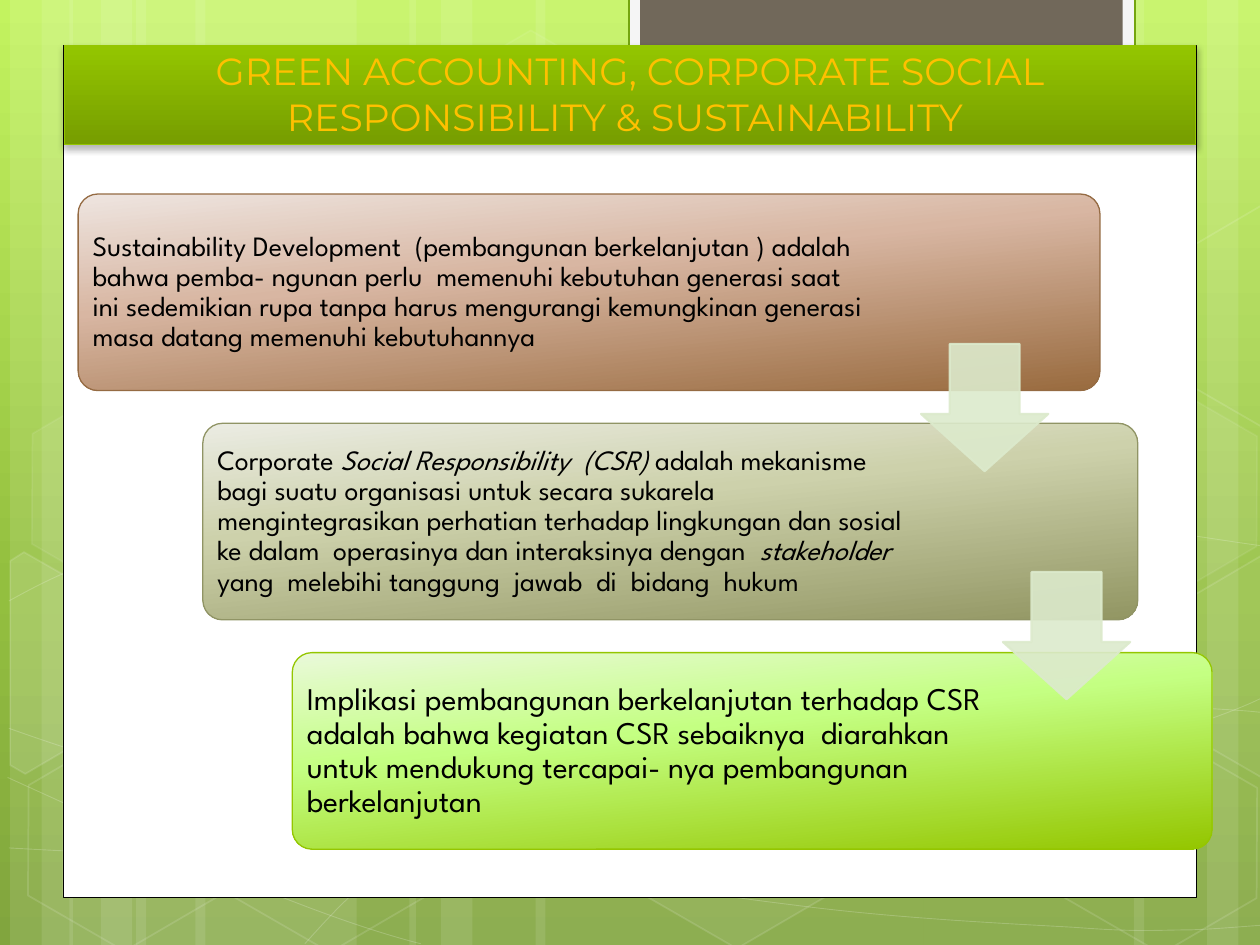
from math import cos, radians, sin

from lxml import etree
from pptx import Presentation
from pptx.dml.color import RGBColor
from pptx.enum.shapes import MSO_SHAPE
from pptx.enum.text import MSO_ANCHOR, PP_ALIGN
from pptx.oxml.ns import qn
from pptx.util import Inches, Pt

RECTANGLE = MSO_SHAPE.RECTANGLE
ROUNDED = MSO_SHAPE.ROUNDED_RECTANGLE
HEXAGON = MSO_SHAPE.HEXAGON
DOWN_ARROW = MSO_SHAPE.DOWN_ARROW
MIDDLE, BOTTOM = MSO_ANCHOR.MIDDLE, MSO_ANCHOR.BOTTOM
CENTER = PP_ALIGN.CENTER

WHITE = RGBColor(0xFF, 0xFF, 0xFF)
BLACK = RGBColor(0, 0, 0)
GREEN = RGBColor(0x94, 0xC6, 0x00)
DARK_GREEN = RGBColor(0x76, 0x9D, 0x00)
TAB_EDGE = RGBColor(0x74, 0xA5, 0x10)
TAB_LIGHT = RGBColor(0xF5, 0xF5, 0xF5)
TAB_BROWN = RGBColor(0x71, 0x68, 0x5A)
AMBER = RGBColor(0xFF, 0xC0, 0x00)
BROWN_EDGE = RGBColor(0x95, 0x6B, 0x43)
OLIVE_EDGE = RGBColor(0x90, 0x94, 0x65)
ARROW_GREEN = RGBColor(0xDC, 0xEA, 0xCC)
BACKGROUND = [(0, RGBColor(0xC3, 0xF3, 0x5F)), (62, RGBColor(0x93, 0xBF, 0x3F)), (100, RGBColor(0x81, 0xA5, 0x3E))]
BROWNS = [(0, RGBColor(0xEE, 0xE5, 0xE0)), (40, RGBColor(0xD8, 0xB6, 0xA2)), (100, RGBColor(0x99, 0x6B, 0x3F))]
OLIVES = [(0, RGBColor(0xEB, 0xEC, 0xE3)), (40, RGBColor(0xCD, 0xD1, 0xAB)), (100, RGBColor(0x92, 0x96, 0x63))]
LIMES = [(0, RGBColor(0xEA, 0xF9, 0xDA)), (40, RGBColor(0xC4, 0xFF, 0x82)), (100, GREEN)]

STRIPES = [(1.08, 1.75), (0.08, 0.5), (0.33, 0.83), (1.55, 1.75), (0.55, 0.5), (0.8, 0.83),
           (7.33, 1.75), (9.58, 0.5), (9, 0.83), (4.25, 3.08), (3.25, 0.5), (3.5, 0.83)]
CURVES = [
    ([(0.07, 6.73), (0.61, 6.76), (1.15, 6.79), (1.9, 6.78), (2.65, 6.77), (3.58, 6.75), (4.58, 6.65),
      (5.58, 6.55), (7, 6.36), (7.92, 6.17), (8.83, 5.98), (9.77, 5.68), (10.07, 5.51)], None),
    ([(0.07, 4.77), (0.36, 4.61), (0.65, 4.46), (1.21, 4.31), (1.78, 4.16), (2.59, 3.94), (3.47, 3.87),
      (4.36, 3.8), (5.44, 3.79), (6.54, 3.87), (7.64, 3.95), (9.47, 4.26), (10.07, 4.34)], None),
    ([(0.06, 6.17), (1.27, 6.72), (2.47, 7.27), (3.34, 7.49)], None),
    ([(0.07, 5.78), (0.38, 5.89), (0.7, 6), (1.28, 6.16), (1.86, 6.31), (2.73, 6.56), (3.57, 6.73),
      (4.4, 6.9), (5.45, 7.08), (6.28, 7.18), (7.11, 7.29), (8, 7.33), (8.53, 7.36),
      (9.05, 7.4), (9.19, 7.38), (9.45, 7.38), (9.71, 7.37), (9.89, 7.35), (10.07, 7.34)], None),
    ([(2.42, 7.49), (2.6, 7.29), (2.78, 7.09), (3.02, 6.91), (3.26, 6.73), (3.6, 6.53), (3.88, 6.39),
      (4.16, 6.25), (4.33, 6.19), (4.7, 6.09), (5.06, 5.99), (5.73, 5.85), (6.08, 5.78),
      (6.44, 5.71), (6.49, 5.71), (6.8, 5.69), (7.11, 5.66), (7.6, 5.63), (7.94, 5.62),
      (8.29, 5.61), (8.86, 5.62), (8.86, 5.62), (9.53, 5.62),
      (9.71, 5.63), (9.88, 5.64), (9.97, 5.65), (10.06, 5.66), (10.03, 5.65), (10.06, 5.66)], 21),
]
HEXAGONS = [(3.34, 0.36, 4, 8), (4.97, 5.89, 6, 12), (0.11, 5.91, None, 12),
            (0.14, 3.12, 7, 8), (1.74, 5.92, None, 12), (7.53, 4.53, 10, 12),
            (8.34, 5.93, None, 12), (8.34, 3.14, 7, 8)]
CUT_HEXAGONS = [
    ([(0.08, 4.45), (0.19, 4.38), (0.96, 4.82), (0.95, 5.7), (0.2, 6.14), (0.08, 6.07)], (0.36, 5.35), 10),
    ([(9.26, 4.85), (10.01, 4.41), (10.09, 4.46), (10.09, 6.13), (10.02, 6.17), (9.26, 5.73)], (9.85, 5.2), 4),
    ([(9.26, 2.07), (10.01, 1.63), (10.1, 1.68), (10.09, 3.35), (10.02, 3.39), (9.26, 2.95)], (9.85, 2.41), None),
]
TILT = 30

SUSTAINABILITY = [("Sustainability Development  (pembangunan berkelanjutan ) adalah bahwa pemba- ngunan perlu  memenuhi kebutuhan generasi saat ini sedemikian rupa tanpa harus mengurangi kemungkinan generasi masa datang memenuhi kebutuhannya", False)]
RESPONSIBILITY = [
    ("Corporate ", False), ("Social Responsibility  (CSR) ", True),
    ("adalah mekanisme bagi suatu organisasi untuk secara sukarela mengintegrasikan perhatian terhadap lingkungan dan sosial ke dalam  operasinya dan interaksinya dengan  ", False),
    ("stakeholder  ", True), ("yang  melebihi tanggung  jawab  di  bidang  hukum", False)]
IMPLICATION = [("Implikasi pembangunan berkelanjutan terhadap CSR adalah bahwa kegiatan CSR sebaiknya  diarahkan untuk mendukung tercapai- nya pembangunan berkelanjutan", False)]
CARDS = [(0.62, 8.11, 6.25, SUSTAINABILITY, 16, BROWNS, BROWN_EDGE),
         (1.61, 7.42, 5.64, RESPONSIBILITY, 16, OLIVES, OLIVE_EDGE),
         (2.32, 7.3, 5.55, IMPLICATION, 18, LIMES, GREEN)]


def set_alpha(color_parent, percent):
    color = color_parent.find(".//" + qn("a:srgbClr"))
    etree.SubElement(color, qn("a:alpha"), val=str(percent * 1000))


def set_gradient(fill, element, stops, angle):
    fill.gradient()
    fill.gradient_angle = 360 - angle
    stop_list = element.find(".//" + qn("a:gsLst"))
    for stop in list(stop_list):
        stop_list.remove(stop)
    for position, color in stops:
        stop = etree.SubElement(stop_list, qn("a:gs"), pos=str(position * 1000))
        etree.SubElement(stop, qn("a:srgbClr"), val=str(color))


def style(shape, fill=None, fill_alpha=100, line=None, line_width=1, line_alpha=100):
    shape.shadow.inherit = False
    properties = shape._element.spPr
    if fill is None:
        shape.fill.background()
    else:
        shape.fill.solid()
        shape.fill.fore_color.rgb = fill
        if fill_alpha < 100:
            set_alpha(properties.find(qn("a:solidFill")), fill_alpha)
    if line is None:
        shape.line.fill.background()
    else:
        shape.line.color.rgb = line
        shape.line.width = Pt(line_width)
        if line_alpha < 100:
            set_alpha(properties.find(qn("a:ln")), line_alpha)


def add_box(slide, kind, left, top, width, height):
    return slide.shapes.add_shape(kind, Inches(left), Inches(top), Inches(width), Inches(height))


def add_outline(slide, points, close):
    corners = [(Inches(x), Inches(y)) for x, y in points]
    builder = slide.shapes.build_freeform(*corners[0])
    builder.add_line_segments(corners[1:], close=close)
    return builder.convert_to_shape()


def add_curve(slide, points, straight):
    shape = add_outline(slide, points, False)
    segments = list(shape._element.iter(qn("a:lnTo")))
    if straight is not None:
        segments.pop(straight)
    for index in range(0, len(segments), 3):
        first, *others = segments[index:index + 3]
        curve = etree.Element(qn("a:cubicBezTo"))
        first.addprevious(curve)
        for segment in (first, *others):
            curve.append(segment[0])
            segment.getparent().remove(segment)
    return shape


def add_cut_hexagon(slide, points, center):
    cosine, sine = cos(radians(TILT)), sin(radians(TILT))
    offsets = [(x - center[0], y - center[1]) for x, y in points]
    upright = [(center[0] + x * cosine + y * sine, center[1] + y * cosine - x * sine) for x, y in offsets]
    return add_outline(slide, upright, True)


def add_backdrop(slide, height):
    set_gradient(slide.background.fill, slide.element, BACKGROUND, 90)
    for left, width in STRIPES:
        style(add_box(slide, RECTANGLE, left, 0, width, height), WHITE, 10)
    for points, straight in CURVES:
        style(add_curve(slide, points, straight), line=WHITE, line_width=0.5, line_alpha=20)
    hexagons = []
    for left, top, fill_alpha, line_alpha in HEXAGONS:
        hexagon = add_box(slide, HEXAGON, left, top, 1.75, 1.52)
        hexagon.adjustments[0] = 0.285
        hexagons.append((hexagon, fill_alpha, line_alpha))
    for points, center, fill_alpha in CUT_HEXAGONS:
        hexagons.append((add_cut_hexagon(slide, points, center), fill_alpha, 12))
    for hexagon, fill_alpha, line_alpha in hexagons:
        hexagon.rotation = TILT
        style(hexagon, WHITE if fill_alpha else None, fill_alpha or 100, WHITE, 1, line_alpha)


def add_panel(slide, left, top, width, height):
    style(add_box(slide, RECTANGLE, left, top, width, height), WHITE, line=BLACK, line_width=0.5)
    style(add_box(slide, RECTANGLE, 4.99, -0.02, 4.02, 0.76), TAB_LIGHT, line=TAB_EDGE, line_width=1.25)
    style(add_box(slide, RECTANGLE, 5.08, -0.02, 3.83, 0.68), TAB_BROWN)


def add_title(slide, left, top, width, height):
    shape = add_box(slide, RECTANGLE, left, top, width, height)
    style(shape, line=GREEN, line_width=0.75)
    set_gradient(shape.fill, shape._element.spPr, [(0, GREEN), (100, DARK_GREEN)], 90)
    effects = shape._element.spPr.find(qn("a:effectLst"))
    shadow = etree.SubElement(effects, qn("a:outerShdw"), blurRad=str(Pt(4)), dist=str(Pt(2)),
                              dir="5400000", rotWithShape="0")
    etree.SubElement(shadow, qn("a:srgbClr"), val=str(BLACK))
    set_alpha(shadow, 28)
    frame = shape.text_frame
    frame.word_wrap = True
    frame.vertical_anchor = BOTTOM
    frame.text = "GREEN ACCOUNTING, CORPORATE SOCIAL RESPONSIBILITY & SUSTAINABILITY "
    paragraph = frame.paragraphs[0]
    paragraph.alignment = CENTER
    font = paragraph.runs[0].font
    font.name, font.size, font.color.rgb = "Montserrat", Pt(21.6), AMBER


def add_card(slide, left, top, width, height, text_width, texts, size, stops, edge):
    card = add_box(slide, ROUNDED, left, top, width, height)
    card.adjustments[0] = 0.1
    style(card, line=edge, line_width=0.75)
    set_gradient(card.fill, card._element.spPr, stops, 84)
    text_height = 1.47
    inset = (height - text_height) / 2
    text_box = slide.shapes.add_textbox(Inches(left + inset), Inches(top + inset),
                                        Inches(text_width), Inches(text_height))
    frame = text_box.text_frame
    frame.word_wrap = True
    frame.vertical_anchor = MIDDLE
    frame.margin_left = frame.margin_right = frame.margin_top = frame.margin_bottom = Inches(0.07)
    paragraph = frame.paragraphs[0]
    paragraph.line_spacing = 0.9
    for text, italic in texts:
        run = paragraph.add_run()
        run.text = text
        font = run.font
        font.name, font.size, font.italic, font.color.rgb = "League Spartan", Pt(size), italic, BLACK


def add_arrow(slide, left, top, size):
    arrow = add_box(slide, DOWN_ARROW, left, top, size, size)
    arrow.adjustments[0], arrow.adjustments[1] = 0.55, 0.45
    style(arrow, ARROW_GREEN, 90, ARROW_GREEN, 1.25, 90)


presentation = Presentation()
presentation.slide_width, presentation.slide_height = Inches(10), Inches(7.5)
slide = presentation.slides.add_slide(presentation.slide_layouts[6])
add_backdrop(slide, 7.5)
add_panel(slide, 0.5, 0.36, 9, 6.76)
add_title(slide, 0.51, 0.36, 8.98, 0.79)
for row, (left, width, *content) in enumerate(CARDS):
    add_card(slide, left, 1.54 + 1.82 * row, width, 1.56, *content)
for left, top in ((7.31, 2.73), (7.96, 4.54)):
    add_arrow(slide, left, top, 1.01)
presentation.save("out.pptx")
